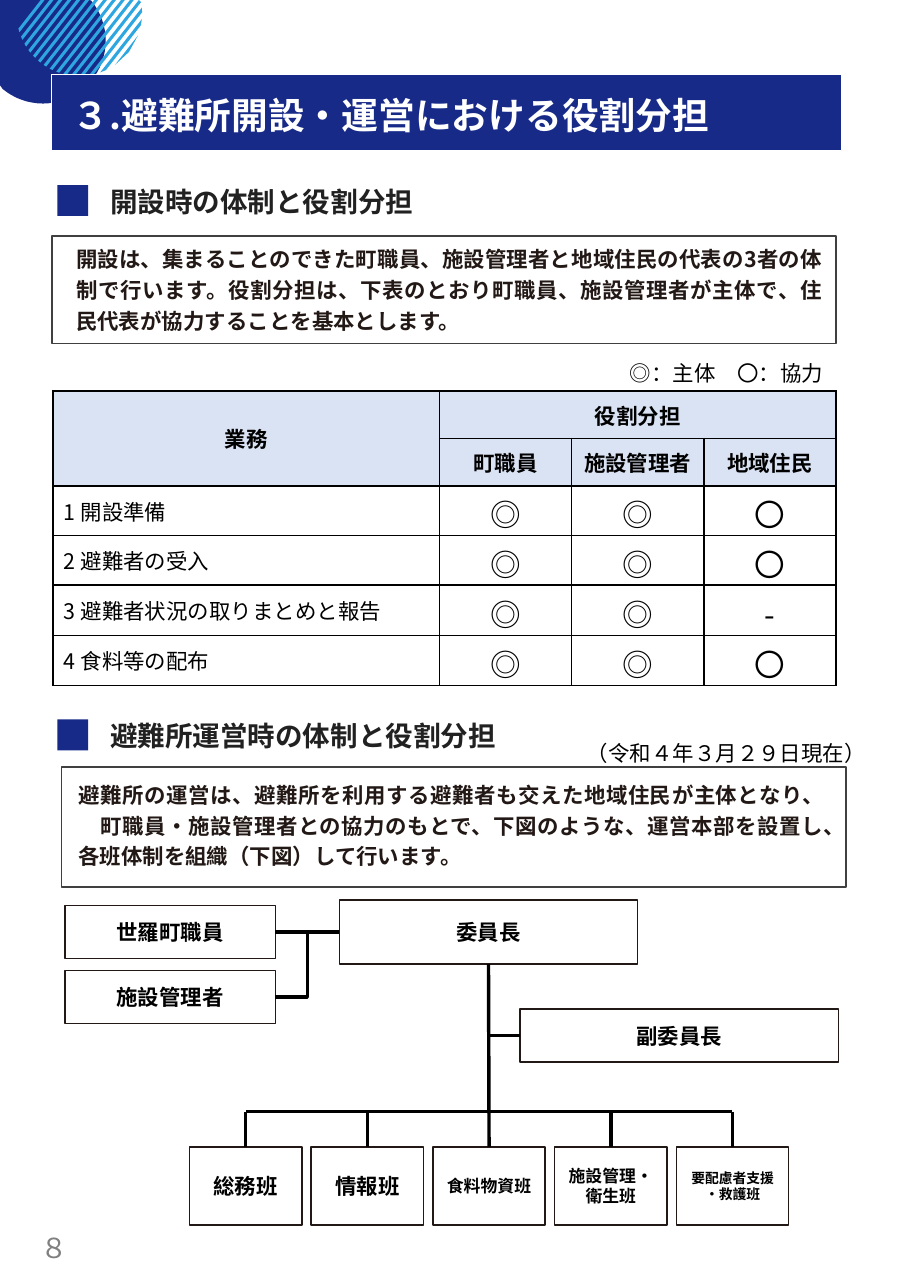
from math import cos, pi, sin, sqrt

from lxml import etree
from pptx import Presentation
from pptx.dml.color import RGBColor
from pptx.enum.shapes import MSO_CONNECTOR, MSO_SHAPE
from pptx.enum.text import MSO_ANCHOR, MSO_AUTO_SIZE, PP_ALIGN
from pptx.oxml.ns import qn
from pptx.util import Inches, Pt

RECT = MSO_SHAPE.RECTANGLE
STRAIGHT, ELBOW = MSO_CONNECTOR.STRAIGHT, MSO_CONNECTOR.ELBOW
LEFT, CENTER, JUSTIFY = PP_ALIGN.LEFT, PP_ALIGN.CENTER, PP_ALIGN.JUSTIFY
TOP, MIDDLE = MSO_ANCHOR.TOP, MSO_ANCHOR.MIDDLE
SITE_TOP, SITE_LEFT, SITE_BOTTOM, SITE_RIGHT = range(4)

NAVY = RGBColor(0x17, 0x2A, 0x88)
SKY = RGBColor(0x2E, 0xA7, 0xE0)
PALE = RGBColor(0xDA, 0xE3, 0xF3)
WHITE = RGBColor(0xFF, 0xFF, 0xFF)
BLACK = RGBColor(0, 0, 0)
INK = RGBColor(0x22, 0x18, 0x15)
HEADING = RGBColor(0x21, 0x21, 0x21)
FRAME = RGBColor(0x40, 0x40, 0x40)
GREY = RGBColor(0x80, 0x80, 0x80)
FONT = "Noto Sans CJK JP"

# Content
TITLE = "３.避難所開設・運営における役割分担"
HEADINGS = [("開設時の体制と役割分担", 1.66), ("避難所運営時の体制と役割分担", 6.51)]
# text, frame (left, top, width, height), insets (left, top, right, bottom)
STATEMENTS = [
    ("開設は、集まることのできた町職員、施設管理者と地域住民の代表の3者の体制で行います。"
     "役割分担は、下表のとおり町職員、施設管理者が主体で、住民代表が協力することを基本とします。",
     (0.47, 2.14, 7.12, 0.98), (0.22, 0.05, 0.13, 0)),
    ("避難所の運営は、避難所を利用する避難者も交えた地域住民が主体となり、"
     "　町職員・施設管理者との協力のもとで、下図のような、運営本部を設置し、"
     "各班体制を組織（下図）して行います。",
     (0.56, 6.96, 7.12, 1.09), (0.15, 0.09, 0.2, 0)),
]
LEGEND = "◎：主体　〇：協力"
DATE = "（令和４年３月２９日現在）"
PAGE_NUMBER = "８"
DUTIES = [
    ("業務", "役割分担", "", ""),
    ("", "町職員", "施設管理者", "地域住民"),
    ("1 開設準備", "◎", "◎", "〇"),
    ("2 避難者の受入", "◎", "◎", "〇"),
    ("3 避難者状況の取りまとめと報告", "◎", "◎", "-"),
    ("4 食料等の配布", "◎", "◎", "〇"),
]
COLUMN_WIDTHS = [3.51, 1.2, 1.2, 1.2]
ROW_HEIGHTS = [0.43, 0.43, 0.45, 0.45, 0.46, 0.45]
OFFICERS = {
    "委員長": (3.08, 8.17, 2.71, 0.58),
    "世羅町職員": (0.59, 8.22, 1.91, 0.48),
    "施設管理者": (0.59, 8.81, 1.91, 0.48),
    "副委員長": (4.72, 9.16, 2.89, 0.48),
}
TEAMS = [("総務班", 14), ("情報班", 14), ("食料物資班", 11),
         ("施設管理・\n衛生班", 11), ("要配慮者支援\n・救護班", 9)]
TEAM_LEFT, TEAM_TOP, TEAM_PITCH = 1.72, 10.41, 1.105
TEAM_WIDTH, TEAM_HEIGHT = 1.02, 0.71
BUS_Y = 10.09

deck = Presentation()
deck.slide_width, deck.slide_height = Inches(8.27), Inches(11.69)
page = deck.slides.add_slide(deck.slide_layouts[5])


def write(frame, text, size, color, bold=False, align=LEFT, anchor=TOP,
          insets=None, spacing=None, font=FONT):
    frame.text = text
    frame.word_wrap = True
    frame.vertical_anchor = anchor
    if insets:
        (frame.margin_left, frame.margin_top,
         frame.margin_right, frame.margin_bottom) = map(Inches, insets)
    for para in frame.paragraphs:
        para.alignment = align
        para.line_spacing = spacing
        style(para, size, color, bold, font)


def style(para, size, color, bold, font=FONT):
    para.font.name, para.font.size, para.font.bold = font, Pt(size), bold
    para.font.color.rgb = color
    properties = para._p.pPr.find(qn("a:defRPr"))
    etree.SubElement(properties, qn("a:ea"), typeface=FONT)


def add_text(place, text, size, color, **options):
    box = page.shapes.add_textbox(*map(Inches, place))
    write(box.text_frame, text, size, color, **options)


def paint(shape, fill=None, line=None):
    shape.shadow.inherit = False
    if fill is None:
        shape.fill.background()
    else:
        shape.fill.solid()
        shape.fill.fore_color.rgb = fill
    if line is None:
        shape.line.fill.background()
    else:
        shape.line.color.rgb = line
        shape.line.width = Pt(1)


def add_box(place, fill=None, line=None):
    box = page.shapes.add_shape(RECT, *map(Inches, place))
    paint(box, fill, line)
    return box


def add_outline(contours, fill):
    builder = None
    for contour in contours:
        points = [(Inches(x), Inches(y)) for x, y in contour]
        if builder is None:
            builder = page.shapes.build_freeform(*points[0])
        else:
            builder.move_to(*points[0])
        builder.add_line_segments(points[1:], close=True)
    paint(builder.convert_to_shape(), fill)


def add_line(x1, y1, x2, y2, kind=STRAIGHT):
    line = page.shapes.add_connector(kind, *map(Inches, (x1, y1, x2, y2)))
    line.line.color.rgb = BLACK
    line.line.width = Pt(2.25)
    etree.SubElement(line._element.spPr, qn("a:effectLst"))
    return line


def join(start, start_site, end, end_site, kind=STRAIGHT):
    line = add_line(0, 0, 1, 1, kind)
    line.begin_connect(start, start_site)
    line.end_connect(end, end_site)


# Corner decoration: a disc cut by the page edges and a striped disc
RADIUS, STRIPE_X, STRIPE_Y, SLANT = 0.57, 0.72, 0.12, 0.78


def stripe_edge(top_x):
    """Ends of the slanted line x = top_x - SLANT * y inside the striped disc."""
    offset = top_x - STRIPE_X
    a, b = 1 + SLANT ** 2, SLANT * offset + STRIPE_Y
    c = offset ** 2 + STRIPE_Y ** 2 - RADIUS ** 2
    root = sqrt(max(0, b * b - a * c))
    ends = max(0, (b - root) / a), (b + root) / a
    return [(top_x - SLANT * y, y) for y in ends]


angles = [2 * pi * step / 72 for step in range(72)]
add_outline([[(max(0, 0.39 + RADIUS * cos(t)), max(0, 0.37 + RADIUS * sin(t)))
              for t in angles]], NAVY)
stripe_lefts = [0.37 + 0.081 * i for i in range(15)]
add_outline([stripe_edge(x) + stripe_edge(x + 0.035)[::-1] for x in stripe_lefts], SKY)

# Title bar, in front of the decoration
title = page.shapes.title
title.left, title.top, title.width, title.height = map(Inches, (0.47, 0.68, 7.17, 0.69))
paint(title, NAVY, WHITE)
title.line.width = Pt(0.75)
write(title.text_frame, TITLE, 24, WHITE, bold=True, anchor=MIDDLE, insets=(0.19, 0.04, 0, 0))
title.text_frame.auto_size = MSO_AUTO_SIZE.NONE
title._element.getparent().append(title._element)

# Section headings and framed statements
for text, top in HEADINGS:
    add_box((0.52, top + 0.02, 0.28, 0.28), NAVY)
    add_text((0.99, top, 4.81, 0.32), text, 18, HEADING, bold=True, insets=(0.01, 0.02, 0, 0))
for text, place, insets in STATEMENTS:
    frame = add_box(place, line=FRAME)
    write(frame.text_frame, text, 14, INK, bold=True, align=JUSTIFY, insets=insets, spacing=1.2)
add_text((5.62, 3.22, 2.02, 0.34), LEGEND, 14, BLACK, font="Calibri")
add_text((5.16, 6.59, 2.79, 0.33), DATE, 14, BLACK, align=CENTER,
         insets=(0.08, 0.01, 0, 0), spacing=1.5, font="Arial")
add_text((0.15, 11.12, 0.68, 0.4), PAGE_NUMBER, 18, GREY, align=CENTER, font="Arial")

# Table of duties
table = page.shapes.add_table(len(DUTIES), len(COLUMN_WIDTHS), Inches(0.48), Inches(3.55),
                              Inches(sum(COLUMN_WIDTHS)), Inches(sum(ROW_HEIGHTS))).table
table.first_row = table.horz_banding = False
for column, width in zip(table.columns, COLUMN_WIDTHS):
    column.width = Inches(width)
for row, height in zip(table.rows, ROW_HEIGHTS):
    row.height = Inches(height)
for r, duty in enumerate(DUTIES):
    for c, text in enumerate(duty):
        cell, header = table.cell(r, c), r < 2
        properties = cell._tc.get_or_add_tcPr()
        for side in ("a:lnL", "a:lnR", "a:lnT", "a:lnB"):
            border = etree.SubElement(properties, qn(side), w=str(Pt(1)))
            solid = etree.SubElement(border, qn("a:solidFill"))
            etree.SubElement(solid, qn("a:srgbClr"), val=str(BLACK))
        cell.fill.solid()
        cell.fill.fore_color.rgb = PALE if header else WHITE
        cell.vertical_anchor = MIDDLE
        para = cell.text_frame.paragraphs[0]
        para.text = text
        para.alignment = CENTER if header or c else LEFT
        style(para, 14 if header or c == 0 else 20, BLACK, header)
table.cell(0, 0).merge(table.cell(1, 0))
table.cell(0, 1).merge(table.cell(0, 3))


# Organisation chart
def add_post(text, place, size=14):
    box = add_box(place, WHITE, INK)
    write(box.text_frame, text, size, BLACK, bold=True, align=CENTER, anchor=MIDDLE)
    return box


chair, staff, manager, deputy = [add_post(*item) for item in OFFICERS.items()]
team_lefts = [TEAM_LEFT + TEAM_PITCH * i for i in range(len(TEAMS))]
teams = [add_post(text, (left, TEAM_TOP, TEAM_WIDTH, TEAM_HEIGHT), size)
         for (text, size), left in zip(TEAMS, team_lefts)]
drops = [left + TEAM_WIDTH / 2 for left in team_lefts]
trunk_x = drops[2]

join(staff, SITE_RIGHT, chair, SITE_LEFT)
join(chair, SITE_LEFT, manager, SITE_RIGHT, ELBOW)
join(chair, SITE_BOTTOM, teams[2], SITE_TOP)
add_line(trunk_x, 9.4, 4.72, 9.4)
add_line(drops[0], BUS_Y, drops[-1], BUS_Y)
for x in drops[:2] + drops[3:]:
    add_line(x, BUS_Y, x, TEAM_TOP)

deck.save("out.pptx")
